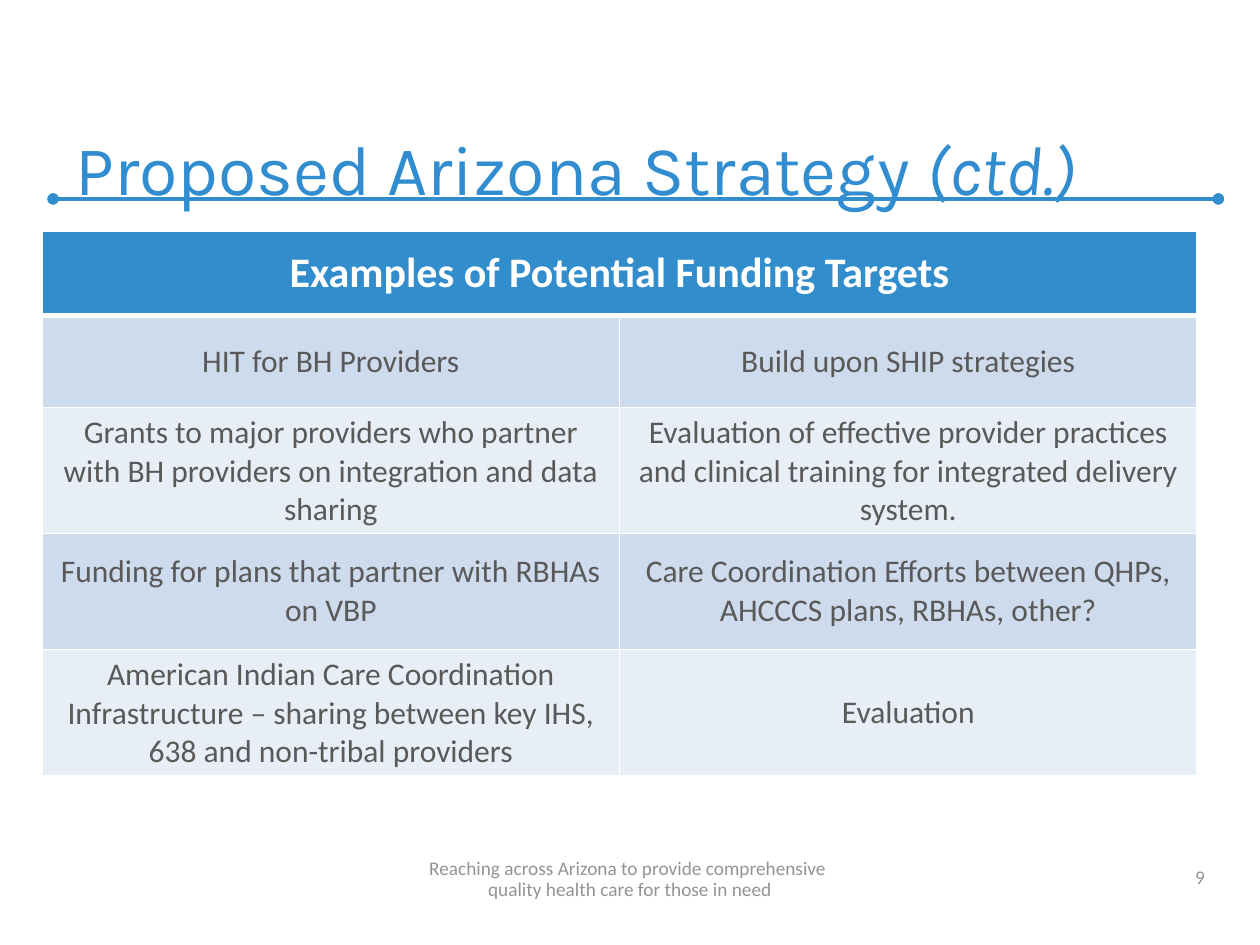
"""Builds the slide on potential funding targets of the proposed Arizona strategy."""
from lxml.etree import SubElement
from pptx import Presentation
from pptx.dml.color import RGBColor
from pptx.enum.shapes import MSO_CONNECTOR as Connector
from pptx.enum.text import MSO_ANCHOR as Anchor, PP_ALIGN as Align
from pptx.oxml import parse_xml
from pptx.oxml.ns import nsdecls, qn
from pptx.util import Cm, Pt

COLORS = {"title": "318DCF", "accent": "318DCC", "white": "FFFFFF", "body": "595959",
          "footer": "939393", "band_dark": "CEDBEC", "band_light": "E8EEF6"}
TITLE, TITLE_TAIL = "Proposed Arizona Strategy ", "(ctd.)"
HEADING = "Examples of Potential Funding Targets"
TARGETS = [
    ("HIT for BH Providers", "Build upon SHIP strategies"),
    ("Grants to major providers who partner with BH providers on integration and data sharing",
     "Evaluation of effective provider practices and clinical training for integrated "
     "delivery system."),
    ("Funding for plans that partner with RBHAs on VBP",
     "Care Coordination Efforts between QHPs, AHCCCS plans, RBHAs, other?"),
    ("American Indian Care Coordination Infrastructure – sharing between key IHS, "
     "638 and non-tribal providers", "Evaluation"),
]
ROW_HEIGHTS = [1.7, 1.85, 2.29, 2.34, 2.51]
COLUMN_WIDTH = 11.64
TAGLINE = "Reaching across Arizona to provide comprehensive \vquality health care for those in need"
PAGE = "9"


def rgb(name):
    return RGBColor.from_string(COLORS[name])


def write(frame, text, size, color, font="Calibri", align=Align.LEFT, bold=False,
          italic_tail="", spacing=None):
    paragraph = frame.paragraphs[0]
    paragraph.text = text
    paragraph.alignment = align
    if spacing:
        paragraph.line_spacing = Pt(spacing)
    if italic_tail:
        tail = paragraph.add_run()
        tail.text = italic_tail
        tail.font.italic = True
    for run in paragraph.runs:
        run.font.size, run.font.name, run.font.bold = Pt(size), font, bold
        run.font.color.rgb = rgb(color)


def add_text(slide, place, text, size, color, bottom=0.13, **style):
    frame = slide.shapes.add_textbox(*map(Cm, place)).text_frame
    frame.word_wrap = True
    frame.vertical_anchor = Anchor.BOTTOM
    frame.margin_bottom = Cm(bottom)
    write(frame, text, size, color, **style)


def add_rule(slide):
    rule = slide.shapes.add_connector(Connector.STRAIGHT, Cm(1.07), Cm(4.01), Cm(24.56), Cm(4.01))
    rule.line.color.rgb = rgb("accent")
    rule.line.width = Pt(2.25)
    for end in ("a:headEnd", "a:tailEnd"):
        SubElement(rule.line._ln, qn(end), type="oval")
    SubElement(rule._element.spPr, qn("a:effectLst"))


def set_borders(cell, bottom):
    widths = {"lnL": 1, "lnR": 1, "lnT": 1, "lnB": bottom}
    for place, (side, width) in enumerate(widths.items()):
        cell._tc.get_or_add_tcPr().insert(place, parse_xml(
            f'<a:{side} {nsdecls("a")} w="{Pt(width)}"><a:solidFill>'
            f'<a:srgbClr val="{COLORS["white"]}"/></a:solidFill></a:{side}>'))


def add_targets(slide):
    table = slide.shapes.add_table(len(ROW_HEIGHTS), 2, Cm(0.85), Cm(4.66),
                                   Cm(2 * COLUMN_WIDTH), Cm(sum(ROW_HEIGHTS))).table
    for column in table.columns:
        column.width = Cm(COLUMN_WIDTH)
    table.cell(0, 0).merge(table.cell(0, 1))
    for r, texts in enumerate([(HEADING, "")] + TARGETS):
        table.rows[r].height = Cm(ROW_HEIGHTS[r])
        header = r == 0
        band = "accent" if header else "band_dark" if r % 2 else "band_light"
        for c, text in enumerate(texts):
            cell = table.cell(r, c)
            cell.fill.solid()
            cell.fill.fore_color.rgb = rgb(band)
            cell.vertical_anchor = Anchor.MIDDLE
            set_borders(cell, 3 if header else 1)
            write(cell.text_frame, text, 24 if header else 18, "white" if header else "body",
                  align=Align.CENTER, bold=header)


def main():
    deck = Presentation()
    deck.slide_width, deck.slide_height = Cm(25.4), Cm(19.05)
    slide = deck.slides.add_slide(deck.slide_layouts[6])
    add_rule(slide)
    add_text(slide, (1.27, 0.84, 22.86, 3.38), TITLE, 40, "title", bottom=0, font="Karla",
             italic_tail=TITLE_TAIL)
    add_targets(slide)
    add_text(slide, (18.62, 17.22, 5.92, 0.81), PAGE, 11, "footer", align=Align.RIGHT)
    add_text(slide, (0, 17.22, 25.4, 1.07), TAGLINE, 11, "footer", align=Align.CENTER, spacing=12)
    deck.save("out.pptx")


if __name__ == "__main__":
    main()
